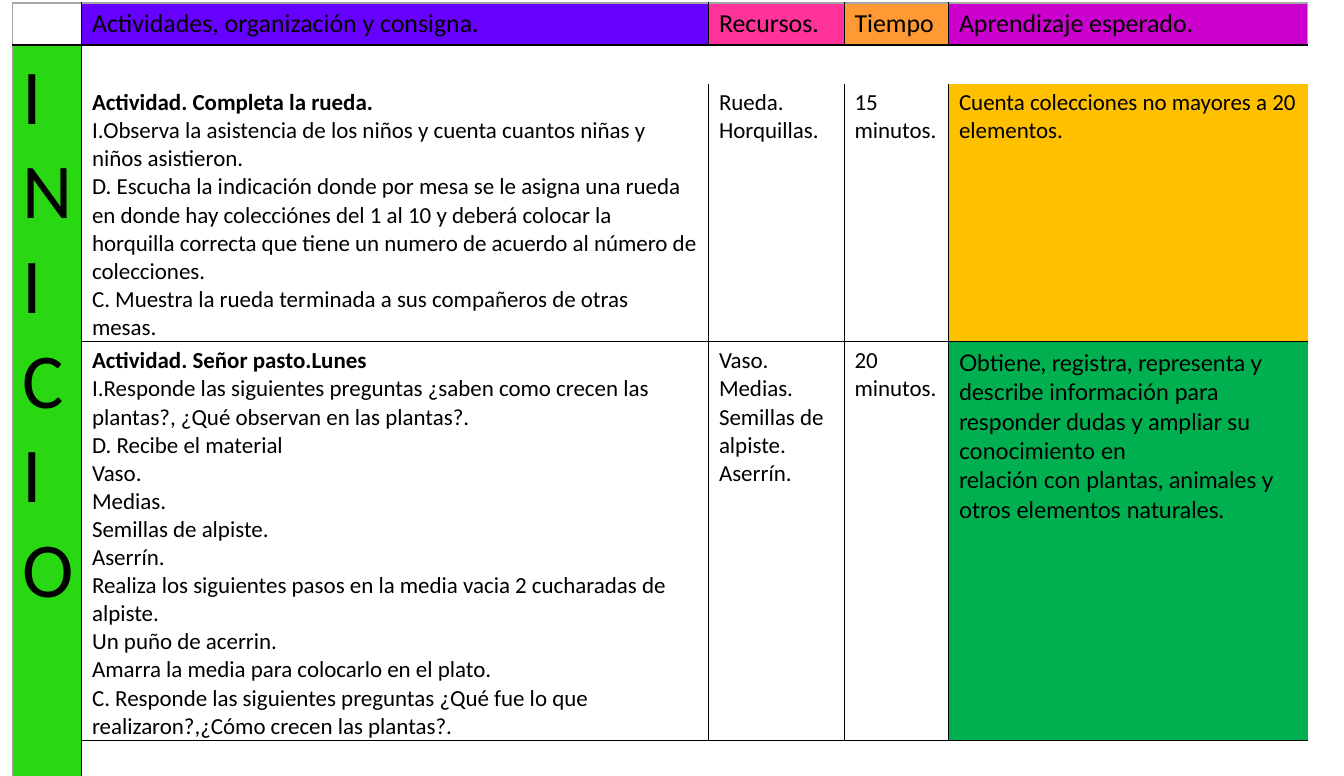
from dataclasses import dataclass

from lxml import etree
from pptx import Presentation
from pptx.dml.color import RGBColor
from pptx.oxml.ns import qn
from pptx.util import Inches, Pt

SLIDE_SIZE = (12.99, 7.5)
TABLE_CORNER = (0.12, 0.03)
COLUMNS = (0.67, 6.06, 1.31, 1.01, 3.47)
ROWS = (0.4, 0.36, 2.23, 3.84, 0.88)
HEADER, GAP, RUEDA, PASTO, CLOSING = range(len(ROWS))
STAGE, ACTIVITY, RESOURCES, TIME, LEARNING = range(len(COLUMNS))


@dataclass(frozen=True)
class Theme:
    ink: str = "000000"
    edge: str = "A6A6A6"
    headers: tuple = ("6600FF", "FF3399", "FF9933", "CC00CC")
    stage: str = "2AD713"
    counting: str = "FFC000"
    nature: str = "00B050"
    font: str = "Calibri"
    learning_font: str = "Lato"
    body_size: int = 16
    header_size: int = 18
    stage_size: int = 54
    thin: float = 1
    thick: float = 1.5


THEME = Theme()

HEADINGS = ("Actividades, organización y consigna.", "Recursos.", "Tiempo",
            "Aprendizaje esperado.")
RUEDA_STEPS = (
    "Actividad. Completa la rueda.",
    "I.Observa la asistencia de los niños y cuenta cuantos niñas y niños asistieron.",
    "D. Escucha la indicación donde por mesa se le asigna una rueda en donde hay "
    "colecciónes del 1 al 10 y deberá colocar la horquilla correcta que tiene un "
    "numero de acuerdo al número de colecciones.",
    "C. Muestra la rueda terminada a sus compañeros de otras mesas.",
)
MATERIALS = ("Vaso.", "Medias.", "Semillas de alpiste.", "Aserrín.")
PASTO_STEPS = (
    "Actividad. Señor pasto.Lunes",
    "I.Responde las siguientes preguntas ¿saben como crecen las plantas?, "
    "¿Qué observan en las plantas?.",
    "D. Recibe el material",
    *MATERIALS,
    "Realiza los siguientes pasos en la media vacia 2 cucharadas de alpiste.",
    "Un puño de acerrin.",
    "Amarra la media para colocarlo en el plato.",
    "C. Responde las siguientes preguntas ¿Qué fue lo que realizaron?,"
    "¿Cómo crecen las plantas?.",
)
NATURE_GOAL = (
    "Obtiene, registra, representa y",
    "describe información para responder dudas y ampliar su conocimiento en",
    "relación con plantas, animales y otros elementos naturales.",
)


def write(frame, lines, *, size=THEME.body_size, font=THEME.font, titled=False,
          spacing=None):
    """Write one paragraph per line; titled makes the first one bold."""
    for index, line in enumerate(lines):
        paragraph = frame.paragraphs[0] if index == 0 else frame.add_paragraph()
        if spacing:
            paragraph.line_spacing = spacing
        run = paragraph.add_run()
        run.text = line
        run.font.size = Pt(size)
        run.font.name = font
        run.font.bold = titled and index == 0
        run.font.color.rgb = RGBColor.from_string(THEME.ink)


def horizontal_rule(boundary, column):
    """Return colour and width of the rule above row number boundary."""
    if boundary == HEADER:
        return THEME.edge, THEME.thin
    if boundary == GAP:
        return THEME.ink, THEME.thick
    if boundary == RUEDA and column == TIME:
        return THEME.ink, THEME.thin
    if boundary in (PASTO, CLOSING) and column != STAGE:
        return THEME.ink, THEME.thin
    return None


def vertical_rule(row, boundary):
    """Return colour and width of the rule left of column number boundary."""
    if boundary == STAGE or (boundary == len(COLUMNS) and row in (HEADER, GAP)):
        return THEME.edge, THEME.thin
    inner = boundary < len(COLUMNS) and row in (HEADER, RUEDA, PASTO)
    if boundary == ACTIVITY or inner:
        return THEME.ink, THEME.thin
    return None


class LessonSlide:
    def __init__(self, presentation, theme):
        self.theme = theme
        self.slide = presentation.slides.add_slide(presentation.slide_layouts[6])

    def add_grid(self):
        left, top = map(Inches, TABLE_CORNER)
        self.table = self.slide.shapes.add_table(
            len(ROWS), len(COLUMNS), left, top,
            Inches(sum(COLUMNS)), Inches(sum(ROWS))).table
        self.table.first_row = self.table.horz_banding = False
        for column, width in zip(self.table.columns, COLUMNS):
            column.width = Inches(width)
        for row, height in zip(self.table.rows, ROWS):
            row.height = Inches(height)
        for row in range(len(ROWS)):
            for column in range(len(COLUMNS)):
                self.rule_cell(row, column)

    def rule_cell(self, row, column):
        cell = self.table.cell(row, column)
        cell.fill.background()
        rules = {
            "a:lnL": vertical_rule(row, column),
            "a:lnR": vertical_rule(row, column + 1),
            "a:lnT": horizontal_rule(row, column),
            "a:lnB": horizontal_rule(row + 1, column),
        }
        properties = cell._tc.get_or_add_tcPr()
        for index, (tag, rule) in enumerate(rules.items()):
            line = etree.Element(qn(tag))
            if rule:
                color, width = rule
                line.set("w", str(Pt(width)))
                fill = etree.SubElement(line, qn("a:solidFill"))
                etree.SubElement(fill, qn("a:srgbClr"), val=color)
            else:
                etree.SubElement(line, qn("a:noFill"))
            properties.insert(index, line)

    def merge(self, first, last):
        self.table.cell(*first).merge(self.table.cell(*last))

    def shrink_empty(self, row):
        """Give the empty cells of a row the body size, so the row stays low."""
        for column in range(ACTIVITY, len(COLUMNS)):
            paragraph = self.table.cell(row, column).text_frame.paragraphs[0]
            etree.SubElement(paragraph._p, qn("a:endParaRPr"),
                             sz=str(self.theme.body_size * 100))

    def fill_cell(self, row, column, lines, color=None, **text_format):
        cell = self.table.cell(row, column)
        if row != HEADER:
            cell.margin_bottom = 0
        if color:
            cell.fill.solid()
            cell.fill.fore_color.rgb = RGBColor.from_string(color)
        write(cell.text_frame, lines, **text_format)


def main():
    presentation = Presentation()
    presentation.slide_width, presentation.slide_height = map(Inches, SLIDE_SIZE)
    lesson = LessonSlide(presentation, THEME)
    lesson.add_grid()
    lesson.merge((GAP, STAGE), (CLOSING, STAGE))
    for row in (GAP, CLOSING):
        lesson.merge((row, ACTIVITY), (row, LEARNING))
        lesson.shrink_empty(row)

    for column, (heading, color) in enumerate(zip(HEADINGS, THEME.headers), ACTIVITY):
        lesson.fill_cell(HEADER, column, [heading], color, size=THEME.header_size)
    lesson.fill_cell(GAP, STAGE, "INICIO", THEME.stage, size=THEME.stage_size)

    lesson.fill_cell(RUEDA, ACTIVITY, RUEDA_STEPS, titled=True)
    lesson.fill_cell(RUEDA, RESOURCES, ["Rueda.", "Horquillas."])
    lesson.fill_cell(RUEDA, TIME, ["15 minutos."])
    lesson.fill_cell(RUEDA, LEARNING,
                     ["Cuenta colecciones no mayores a 20 elementos."], THEME.counting)

    lesson.fill_cell(PASTO, ACTIVITY, PASTO_STEPS, titled=True)
    lesson.fill_cell(PASTO, RESOURCES, MATERIALS)
    lesson.fill_cell(PASTO, TIME, ["20 minutos."])
    lesson.fill_cell(PASTO, LEARNING, NATURE_GOAL, THEME.nature,
                     font=THEME.learning_font, spacing=1.07)
    presentation.save("out.pptx")


if __name__ == "__main__":
    main()
